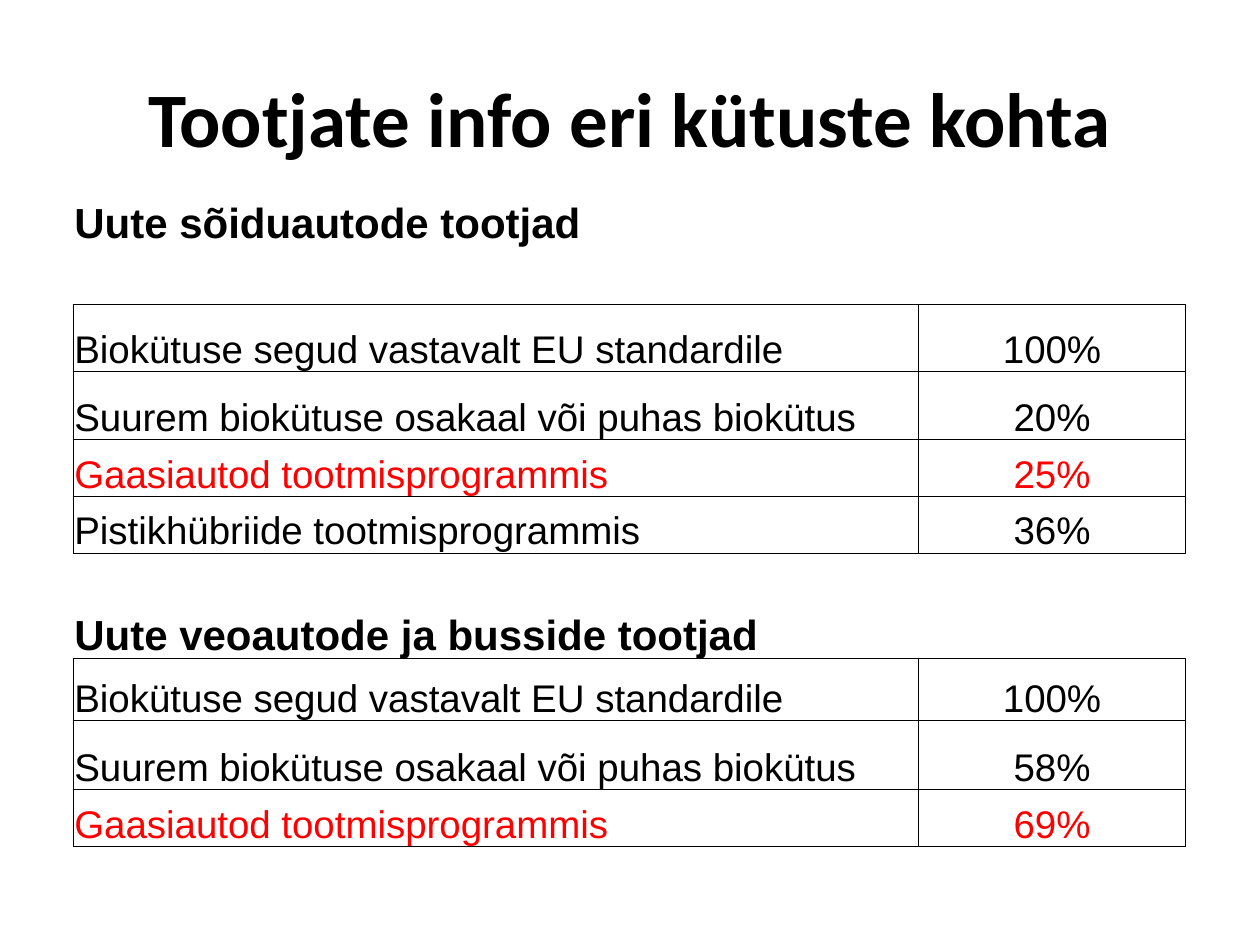
import pptx
import pptx.dml.color
import pptx.enum.text
import pptx.oxml
import pptx.oxml.ns
import pptx.util
from pptx.util import Inches

BLACK = "000000"
RED = "FF0000"
NO_STYLE = "{2D5ABB26-0587-4C30-8999-92F81FD0307C}"

BLEND = "Biokütuse segud vastavalt EU standardile"
PURE = "Suurem biokütuse osakaal või puhas biokütus"
GAS = "Gaasiautod tootmisprogrammis"
HYBRID = "Pistikhübriide tootmisprogrammis"

ROWS = [
    (0.84, "Uute sõiduautode tootjad", "", BLACK),
    (0.53, BLEND, "100%", BLACK),
    (0.54, PURE, "20%", BLACK),
    (0.45, GAS, "25%", RED),
    (0.45, HYBRID, "36%", BLACK),
    (0.39, "", "", BLACK),
    (0.45, "Uute veoautode ja busside tootjad", "", BLACK),
    (0.49, BLEND, "100%", BLACK),
    (0.55, PURE, "58%", BLACK),
    (0.45, GAS, "69%", RED),
]


def rgb(value):
    return pptx.dml.color.RGBColor.from_string(value)


class Deck:
    body_font = "Arial"
    title_font = "Calibri"
    head_size = 24
    body_size = 22
    border = 0.5

    def __init__(self):
        self.prs = pptx.Presentation()
        self.prs.slide_width = Inches(10)
        self.prs.slide_height = Inches(7.5)
        self.s = self.prs.slides.add_slide(self.prs.slide_layouts[5])

    def text(self, tf, text, font, size, color, bold=False, center=False):
        p = tf.paragraphs[0]
        p.text = text
        align = pptx.enum.text.PP_ALIGN
        p.alignment = align.CENTER if center else align.LEFT
        for r in p.runs:
            r.font.name = font
            r.font.size = pptx.util.Pt(size)
            r.font.bold = bold
            r.font.color.rgb = rgb(color)

    def title(self, text, x, y, w, h):
        sp = self.s.shapes.title
        sp.left, sp.top = Inches(x), Inches(y)
        sp.width, sp.height = Inches(w), Inches(h)
        tf = sp.text_frame
        tf.vertical_anchor = pptx.enum.text.MSO_ANCHOR.MIDDLE
        self.text(tf, text, self.title_font, 44, BLACK, True, True)

    def outline(self, cell):
        tcPr = cell._tc.get_or_add_tcPr()
        width = pptx.util.Pt(self.border)
        for side in ("lnL", "lnR", "lnT", "lnB"):
            tcPr.append(pptx.oxml.parse_xml(
                f'<a:{side} {pptx.oxml.ns.nsdecls("a")} w="{width}">'
                f'<a:solidFill><a:srgbClr val="{BLACK}"/></a:solidFill>'
                f'</a:{side}>'))

    def table(self, rows, x, y, widths):
        heights = [row[0] for row in rows]
        frame = self.s.shapes.add_table(
            len(rows), len(widths), Inches(x), Inches(y),
            Inches(sum(widths)), Inches(sum(heights)))
        tbl = frame.table
        tbl.first_row = tbl.horz_banding = False
        tag = pptx.oxml.ns.qn("a:tableStyleId")
        tbl._tbl.tblPr.find(tag).text = NO_STYLE
        for col, width in zip(tbl.columns, widths):
            col.width = Inches(width)
        for i, (height, label, share, color) in enumerate(rows):
            tbl.rows[i].height = Inches(height)
            for j, text in enumerate((label, share)):
                self.cell(tbl.cell(i, j), text, color, bool(share), j == 1)
        anchor = pptx.enum.text.MSO_ANCHOR
        tbl.cell(0, 0).vertical_anchor = anchor.TOP

    def cell(self, cell, text, color, is_data, center):
        cell.margin_left = cell.margin_right = cell.margin_top = Inches(0.01)
        cell.margin_bottom = 0
        cell.vertical_anchor = pptx.enum.text.MSO_ANCHOR.BOTTOM
        if is_data:
            self.outline(cell)
        cell.fill.background()
        size = self.body_size if is_data else self.head_size
        self.text(cell.text_frame, text, self.body_font, size, color,
                  not is_data, center)


def main():
    deck = Deck()
    deck.title("Tootjate info eri kütuste kohta", 0.5, 0.3, 9, 1.25)
    deck.table(ROWS, 0.58, 1.58, (6.71, 2.12))
    deck.prs.save("out.pptx")


if __name__ == "__main__":
    main()
